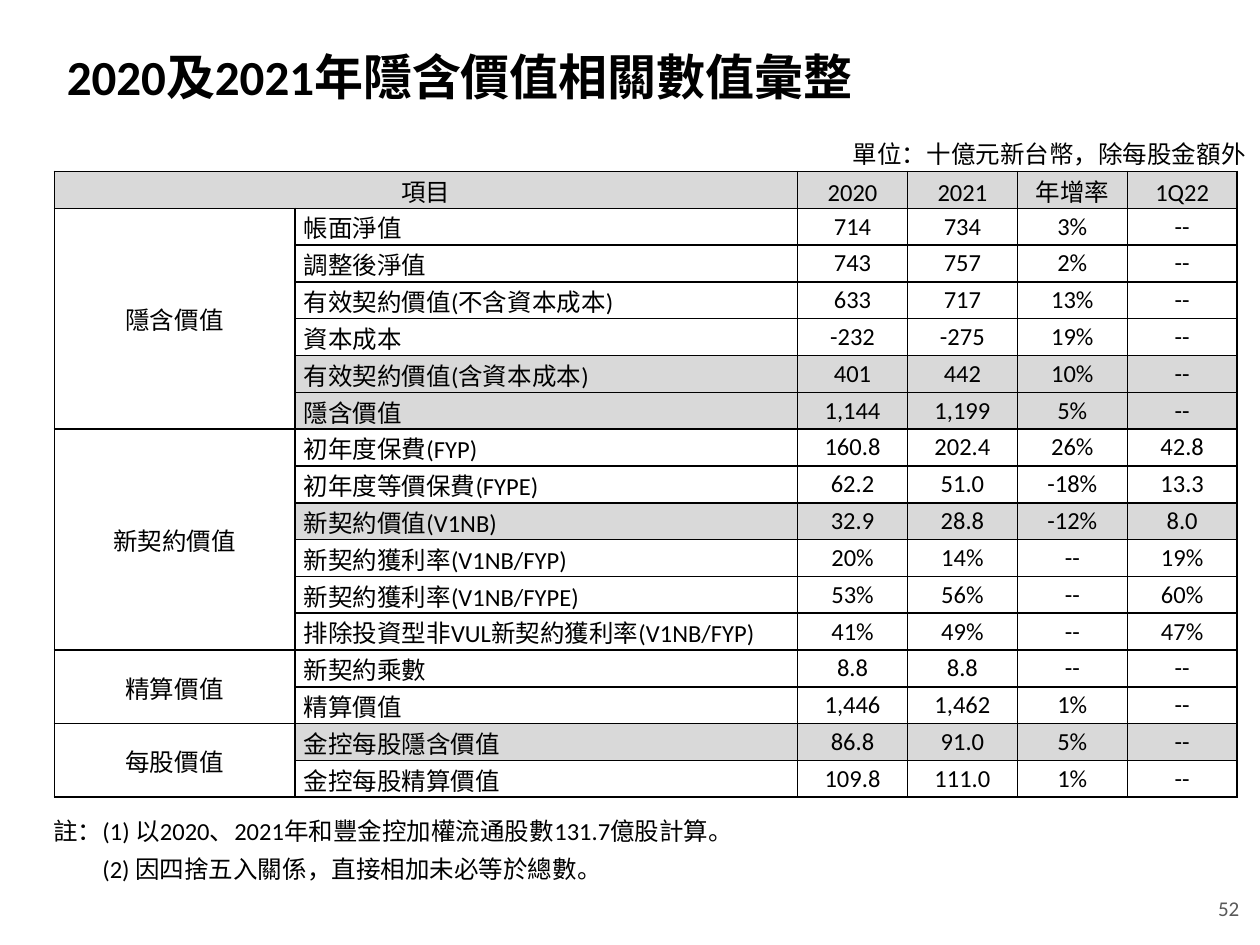
from dataclasses import dataclass

from lxml.etree import SubElement
from pptx import Presentation
from pptx.dml.color import RGBColor
from pptx.enum.text import MSO_ANCHOR as Anchor, MSO_AUTO_SIZE as AutoSize, PP_ALIGN as Align
from pptx.oxml.ns import qn
from pptx.util import Pt

BLACK, GREY, SHADE = "000000", "595959", "D9D9D9"
ROW_HEIGHT = 21
COLUMN_WIDTHS = [137.5, 287.3] + [62.8] * 4
HEADINGS = ["2020", "2021", "年增率", "1Q22"]


@dataclass
class Row:
    label: str
    values: str
    shaded: bool = False
    anchor: Anchor = Anchor.MIDDLE


@dataclass
class Group:
    name: str
    rows: list[Row]


GROUPS = [
    Group("隱含價值", [
        Row("帳面淨值", "714 734 3% --"),
        Row("調整後淨值", "743 757 2% --"),
        Row("有效契約價值(不含資本成本)", "633 717 13% --"),
        Row("資本成本", "-232 -275 19% --"),
        Row("有效契約價值(含資本成本)", "401 442 10% --", shaded=True),
        Row("隱含價值", "1,144 1,199 5% --", shaded=True),
    ]),
    Group("新契約價值", [
        Row("初年度保費(FYP)", "160.8 202.4 26% 42.8"),
        Row("初年度等價保費(FYPE)", "62.2 51.0 -18% 13.3"),
        Row("新契約價值(V1NB)", "32.9 28.8 -12% 8.0", shaded=True),
        Row("新契約獲利率(V1NB/FYP)", "20% 14% -- 19%"),
        Row("新契約獲利率(V1NB/FYPE)", "53% 56% -- 60%"),
        Row("排除投資型非VUL新契約獲利率(V1NB/FYP)", "41% 49% -- 47%", anchor=Anchor.TOP),
    ]),
    Group("精算價值", [
        Row("新契約乘數", "8.8 8.8 -- --"),
        Row("精算價值", "1,446 1,462 1% --"),
    ]),
    Group("每股價值", [
        Row("金控每股隱含價值", "86.8 91.0 5% --", shaded=True),
        Row("金控每股精算價值", "109.8 111.0 1% --"),
    ]),
]


def color(value: str) -> RGBColor:
    return RGBColor.from_string(value)


def set_attributes(target, values: dict) -> None:
    for name, value in values.items():
        setattr(target, name, value)


def write(paragraph, text: str, size: float = 14, ink: str = BLACK, bold: bool = False,
          align: Align = Align.LEFT, spacing: float | None = None) -> None:
    set_attributes(paragraph, {"alignment": align, "line_spacing": Pt(spacing) if spacing else None})
    run = paragraph.add_run()
    run.text = text
    set_attributes(run.font, {"name": "Calibri", "size": Pt(size), "bold": bold})
    run.font.color.rgb = color(ink)


def set_margins(target, horizontal: float, vertical: float) -> None:
    set_attributes(target, {"margin_left": Pt(horizontal), "margin_right": Pt(horizontal),
                            "margin_top": Pt(vertical), "margin_bottom": Pt(vertical)})


def add_text_frame(slide, left: float, top: float, width: float, height: float, **formats):
    frame = slide.shapes.add_textbox(Pt(left), Pt(top), Pt(width), Pt(height)).text_frame
    set_margins(frame, 0, 0)
    set_attributes(frame, formats)
    return frame


def add_borders(cell) -> None:
    properties = cell._tc.get_or_add_tcPr()
    for index, side in enumerate(("lnL", "lnR", "lnT", "lnB")):
        line = SubElement(properties, qn(f"a:{side}"), w=str(Pt(1)))
        fill = SubElement(line, qn("a:solidFill"))
        SubElement(fill, qn("a:srgbClr"), val=BLACK)
        properties.insert(index, line)


def fill_cell(cell, text: str, shaded: bool = False, anchor: Anchor = Anchor.MIDDLE,
              align: Align = Align.CENTER, spacing: float | None = None) -> None:
    cell.vertical_anchor = anchor
    set_margins(cell, 5, 0)
    if shaded:
        cell.fill.solid()
        cell.fill.fore_color.rgb = color(SHADE)
    else:
        cell.fill.background()
    add_borders(cell)
    if text:
        write(cell.text_frame.paragraphs[0], text, align=align, spacing=spacing)


def add_value_table(slide) -> None:
    row_count = 1 + sum(len(group.rows) for group in GROUPS)
    table = slide.shapes.add_table(row_count, len(COLUMN_WIDTHS), Pt(31), Pt(98),
                                   Pt(sum(COLUMN_WIDTHS)), Pt(row_count * ROW_HEIGHT)).table
    set_attributes(table, {"first_row": False, "horz_banding": False})
    for column, width in zip(table.columns, COLUMN_WIDTHS):
        column.width = Pt(width)
    for table_row in table.rows:
        table_row.height = Pt(ROW_HEIGHT)

    # Heading row
    table.cell(0, 0).merge(table.cell(0, 1))
    for column, heading in enumerate(["項目", ""] + HEADINGS):
        fill_cell(table.cell(0, column), heading, shaded=True, spacing=ROW_HEIGHT)

    # Groups, each named in a merged first column
    first = 1
    for group in GROUPS:
        last = first + len(group.rows) - 1
        table.cell(first, 0).merge(table.cell(last, 0))
        for index, row in enumerate(group.rows, first):
            fill_cell(table.cell(index, 0), group.name if index == first else "", spacing=ROW_HEIGHT)
            fill_cell(table.cell(index, 1), row.label, row.shaded, row.anchor, Align.LEFT, ROW_HEIGHT)
            for column, value in enumerate(row.values.split(), 2):
                fill_cell(table.cell(index, column), value, row.shaded)
        first = last + 1


def main() -> None:
    presentation = Presentation()
    set_attributes(presentation, {"slide_width": Pt(720), "slide_height": Pt(540)})
    slide = presentation.slides.add_slide(presentation.slide_layouts[5])

    # Title
    title = slide.shapes.title
    set_attributes(title, {"left": Pt(31), "top": Pt(21.6), "width": Pt(657.4), "height": Pt(44)})
    set_attributes(title.text_frame, {"vertical_anchor": Anchor.MIDDLE, "auto_size": AutoSize.NONE})
    write(title.text_frame.paragraphs[0], "2020及2021年隱含價值相關數值彙整", size=28, bold=True)

    # Unit and table
    unit = add_text_frame(slide, 486.7, 79.2, 226, 17, word_wrap=False,
                          auto_size=AutoSize.SHAPE_TO_FIT_TEXT)
    write(unit.paragraphs[0], "單位：十億元新台幣，除每股金額外", align=Align.CENTER)
    add_value_table(slide)

    # Notes
    notes = add_text_frame(slide, 30.5, 461, 668, 44.6, word_wrap=True,
                           auto_size=AutoSize.SHAPE_TO_FIT_TEXT)
    write(notes.paragraphs[0], "註：(1) 以2020、2021年和豐金控加權流通股數131.7億股計算。", spacing=22)
    second_note = notes.add_paragraph()
    second_note._p.get_or_add_pPr().set("indent", str(Pt(28)))
    write(second_note, "(2) 因四捨五入關係，直接相加未必等於總數。", spacing=22)

    # Page number
    page = add_text_frame(slide, 689, 507.6, 31, 22.3, word_wrap=True, vertical_anchor=Anchor.MIDDLE)
    set_margins(page, 7.2, 3.6)
    write(page.paragraphs[0], "52", size=12, ink=GREY)

    presentation.save("out.pptx")


if __name__ == "__main__":
    main()
